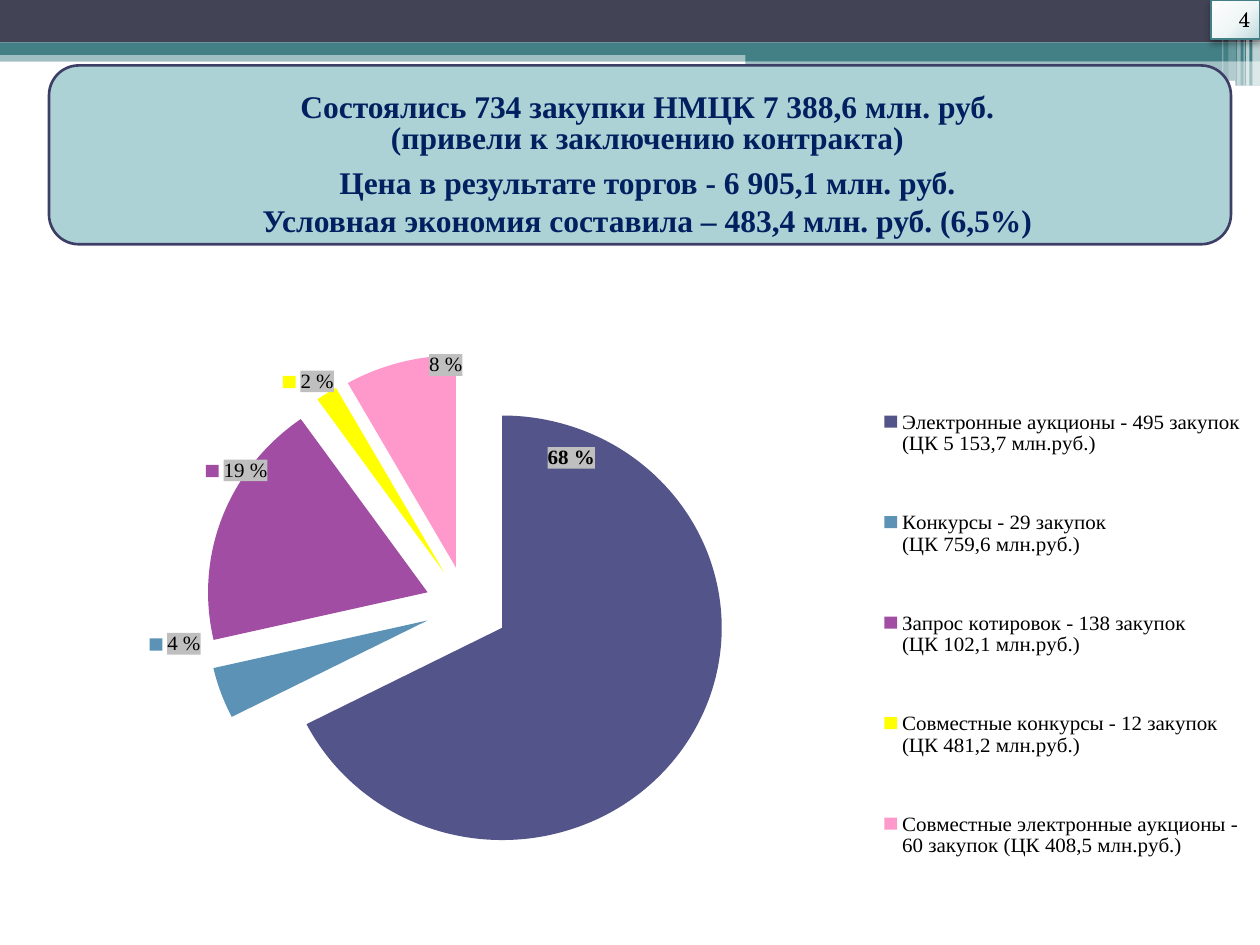
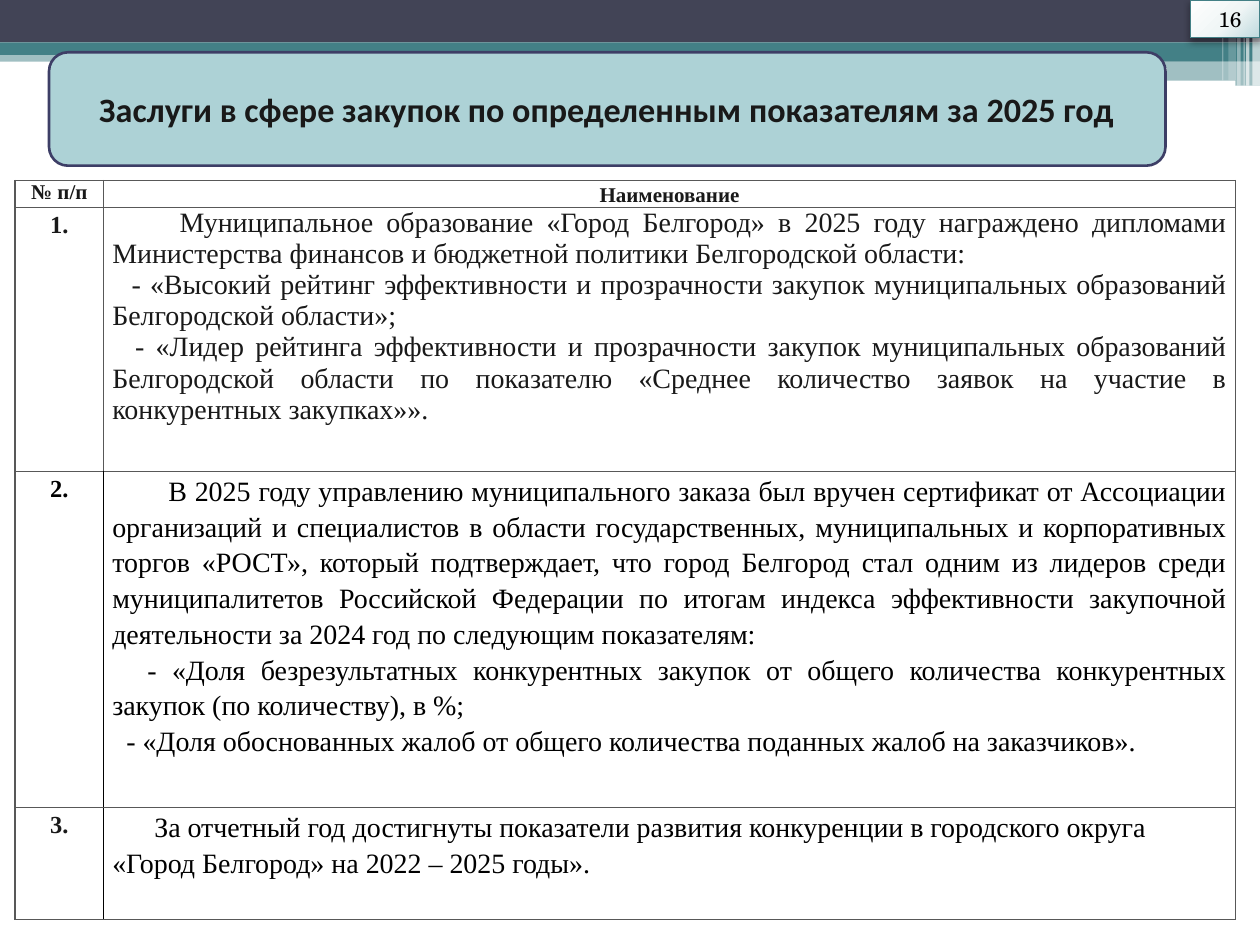
from lxml.etree import SubElement
from pptx import Presentation
from pptx.chart.data import CategoryChartData
from pptx.dml.color import RGBColor
from pptx.enum.chart import XL_CHART_TYPE, XL_LEGEND_POSITION
from pptx.enum.shapes import MSO_SHAPE
from pptx.enum.text import MSO_ANCHOR, MSO_AUTO_SIZE, PP_ALIGN
from pptx.oxml import parse_xml
from pptx.oxml.ns import nsdecls, qn
from pptx.util import Pt

TEAL, DARK, WHITE = "438086", "424456", "FFFFFF"
PANEL, EDGE, NAVY = "ADD2D6", "3D3E66", "002060"
INK, BLACK, GRID = "191919", "000000", "585858"
SERIF, SCHOOL, SANS = "Times New Roman", "TeX Gyre Schola", "Calibri"
BOX, ROUND = MSO_SHAPE.RECTANGLE, MSO_SHAPE.ROUNDED_RECTANGLE

# left, top, width, height, colour, opacity in percent, outline
BANDS = [
    (0, 28.8, 720, 6.5, TEAL, 50, BOX),
    (0, 0, 720, 24.2, DARK, 100, BOX),
    (0, 24.2, 720, 7.2, TEAL, 100, BOX),
    (426, 28, 294, 7, TEAL, 100, BOX),
    (426, 34.9, 294, 14.1, TEAL, 50, BOX),
    (580, 46, 126, 3.1, WHITE, 100, ROUND),
    (715.7, 0, 4.3, 49, WHITE, 65, BOX),
    (712, 0, 2, 49, WHITE, 65, BOX),
    (710.6, 0, 0.7, 49, WHITE, 60, BOX),
    (707, 0, 2, 49, WHITE, 40, BOX),
    (702, 0, 4.3, 46, WHITE, 20, BOX),
    (698.4, 0, 0.7, 46, WHITE, 30, BOX),
]
STRIP = (425.5, 38.9, 241.2, 2.2, WHITE, 100, ROUND)

# text, space before, line spacing
RESULTS = [
    ("Состоялись 734 закупки НМЦК 7 388,6 млн. руб.", 0, 0.8),
    ("(привели к заключению контракта)", 0.7, 0.8),
    ("Цена в результате торгов - 6 905,1 млн. руб.", 4, 1),
    ("Условная экономия составила – 483,4 млн. руб. (6,5%)", 0, 1),
]

# name, share, colour, label shift in x and y, key shown, bold
SHARES = [
    ("Электронные аукционы - 495 закупок\n(ЦК 5 153,7 млн.руб.)",
     0.675, "53548A", -0.12, -0.501, 0, 1),
    ("Конкурсы - 29 закупок\n(ЦК 759,6 млн.руб.)",
     0.039, "5C92B5", -0.011, -0.106, 1, 0),
    ("Запрос котировок - 138 закупок\n(ЦК 102,1 млн.руб.)",
     0.188, "A04DA3", 0.042, -0.056, 1, 0),
    ("Совместные конкурсы - 12 закупок\n(ЦК 481,2 млн.руб.)",
     0.016, "FFFF00", 0.009, 0.008, 1, 0),
    ("Совместные электронные аукционы -\n60 закупок (ЦК 408,5 млн.руб.)",
     0.082, "FF99CC", 0.052, 0.023, 0, 0),
]

# row height, line spacing, text colour, (first-line indent, text) pairs
AWARDS = [
    (150.9, 1, INK, [
        (38.5, "Муниципальное образование «Город Белгород» в 2025 году награждено "
               "дипломами Министерства финансов и бюджетной политики "
               "Белгородской области:"),
        (11, "- «Высокий рейтинг эффективности и прозрачности закупок "
             "муниципальных образований Белгородской области»;"),
        (13, "- «Лидер рейтинга эффективности и прозрачности закупок "
             "муниципальных образований Белгородской области по показателю "
             "«Среднее количество заявок на участие в конкурентных закупках»»."),
    ]),
    (192, 1.15, BLACK, [
        (32, "В 2025 году управлению муниципального заказа был вручен сертификат "
             "от Ассоциации организаций и специалистов в области "
             "государственных, муниципальных и корпоративных торгов «РОСТ», "
             "который подтверждает, что город Белгород стал одним из лидеров "
             "среди муниципалитетов Российской Федерации по итогам индекса "
             "эффективности закупочной деятельности за 2024 год по следующим "
             "показателям:"),
        (20, "- «Доля безрезультатных конкурентных закупок от общего количества "
             "конкурентных закупок (по количеству), в %;"),
        (8, "- «Доля обоснованных жалоб от общего количества поданных жалоб "
            "на заказчиков»."),
    ]),
    (64, 1.15, BLACK, [
        (24, "За отчетный год достигнуты показатели развития конкуренции "
             "в городского округа"),
        (0, "«Город Белгород» на 2022 – 2025 годы»."),
    ]),
]


def paint(fill, tone):
    fill.solid()
    fill.fore_color.rgb = RGBColor.from_string(tone)


def style(font, name, size, tone, bold=False):
    font.name, font.size, font.bold = name, Pt(size), bold
    paint(font.fill, tone)


def pad(frame, left, top, right, bottom):
    frame.margin_left, frame.margin_top = Pt(left), Pt(top)
    frame.margin_right, frame.margin_bottom = Pt(right), Pt(bottom)


def write(frame, lines, name, size, tone, bold=False, align=PP_ALIGN.CENTER):
    """Fill a frame with (text, space before, line spacing, indent) lines."""
    for i, (text, before, lead, dent) in enumerate(lines):
        para = frame.add_paragraph() if i else frame.paragraphs[0]
        para.text, para.alignment = text, align
        para.line_spacing, para.space_before = lead, Pt(before)
        if dent:
            para._p.get_or_add_pPr().set("indent", str(Pt(dent)))
        style(para.font, name, size, tone, bold)


def add_band(slide, left, top, wide, high, tone, part, form):
    band = slide.shapes.add_shape(
        form, Pt(left), Pt(top), Pt(wide), Pt(high))
    band.shadow.inherit = False
    paint(band.fill, tone)
    band.line.fill.background()
    if part < 100:
        hue = band.fill._xPr.find(".//" + qn("a:srgbClr"))
        SubElement(hue, qn("a:alpha")).set("val", str(part * 1000))


def add_panel(slide, top, wide, high):
    """Rounded panel with the title laid over it."""
    spot = [Pt(n) for n in (28, top, wide, high)]
    panel = slide.shapes.add_shape(ROUND, *spot)
    panel.shadow.inherit = False
    paint(panel.fill, PANEL)
    paint(panel.line.fill, EDGE)
    panel.line.width = Pt(1.5)
    title = slide.shapes.title
    slide.shapes._spTree.append(title._element)
    title.left, title.top, title.width, title.height = spot
    frame = title.text_frame
    frame.auto_size, frame.word_wrap = MSO_AUTO_SIZE.NONE, True
    frame.vertical_anchor = MSO_ANCHOR.MIDDLE
    return frame


def add_badge(slide, number, left, high):
    """Slide number in the top right corner."""
    badge = slide.shapes.add_shape(
        BOX, Pt(left), 0, Pt(720 - left), Pt(high))
    stops = "".join(
        f'<a:gs pos="{pos}000"><a:srgbClr val="{tone}"/></a:gs>'
        for pos, tone in ((0, "FEFEFE"), (55, "F0F6F6"), (100, "BFD9DD")))
    props = badge._element.spPr
    props.find(qn("a:prstGeom")).addnext(parse_xml(
        f'<a:gradFill {nsdecls("a")}><a:gsLst>{stops}</a:gsLst>'
        '<a:path path="circle"><a:fillToRect l="-40000" t="-90000" '
        'r="140000" b="190000"/></a:path></a:gradFill>'))
    paint(badge.line.fill, TEAL)
    badge.line.width = Pt(0.75)
    props.append(parse_xml(
        f'<a:effectLst {nsdecls("a")}><a:outerShdw blurRad="{Pt(4.1)}" '
        f'dist="{Pt(2)}" dir="5400000"><a:srgbClr val="{BLACK}">'
        '<a:alpha val="40000"/></a:srgbClr></a:outerShdw></a:effectLst>'))
    frame = badge.text_frame
    pad(frame, 15.8, 2, 0, 2)
    frame.vertical_anchor = MSO_ANCHOR.MIDDLE
    write(frame, [(number, 0, 1, 0)], SCHOOL, 12, BLACK, align=PP_ALIGN.LEFT)


def layout(**spots):
    """Manual chart layout from fractions of the chart area."""
    marks = "".join(f'<c:{k} val="{v}"/>' for k, v in spots.items())
    return parse_xml(f'<c:layout {nsdecls("c")}><c:manualLayout>{marks}'
                     '</c:manualLayout></c:layout>')


def make_label(index, left, top, key, bold):
    label = parse_xml(
        f'<c:dLbl {nsdecls("c", "a")}><c:idx val="{index}"/>'
        '<c:numFmt formatCode="0 %" sourceLinked="0"/>'
        '<c:spPr><a:solidFill><a:srgbClr val="BFBFBF"/></a:solidFill></c:spPr>'
        f'<c:txPr><a:bodyPr/><a:p><a:pPr><a:defRPr sz="1200" b="{bold}">'
        f'<a:latin typeface="{SERIF}"/></a:defRPr></a:pPr>'
        '<a:endParaRPr/></a:p></c:txPr><c:dLblPos val="outEnd"/>'
        f'<c:showLegendKey val="{key}"/><c:showVal val="1"/>'
        '<c:showCatName val="0"/><c:showSerName val="0"/>'
        '<c:showPercent val="0"/><c:showBubbleSize val="0"/></c:dLbl>')
    label.insert(1, layout(x=left, y=top))
    return label


def add_pie(slide):
    data = CategoryChartData(number_format="0.0%")
    data.categories = [share[0] for share in SHARES]
    data.add_series("Series 1", [share[1] for share in SHARES])
    chart = slide.shapes.add_chart(
        XL_CHART_TYPE.PIE, Pt(14.4), Pt(190.8), Pt(705.6), Pt(348.5), data).chart
    style(chart.font, SCHOOL, 10, BLACK)
    chart.has_title, chart.has_legend = False, True

    legend = chart.legend
    legend.position = XL_LEGEND_POSITION.RIGHT
    legend.include_in_layout = False
    style(legend.font, SERIF, 12, BLACK)
    for old in legend._element.findall(qn("c:layout")):
        legend._element.remove(old)
    legend._element.find(qn("c:legendPos")).addnext(layout(
        xMode="edge", yMode="edge", x=0.68, y=0, w=0.32, h=0.95))

    area = chart._chartSpace.chart.plotArea
    for old in area.findall(qn("c:layout")):
        area.remove(old)
    area.insert(0, layout(layoutTarget="inner", xMode="edge", yMode="edge",
                          x=0.011, y=0, w=0.693, h=0.857))

    plot = chart.plots[0]
    plot.vary_by_categories = True
    pie = plot.series[0]
    pie._element.get_or_add_spPr().addnext(
        parse_xml(f'<c:explosion {nsdecls("c")} val="19"/>'))
    labels = pie.data_labels
    labels.show_value = True
    group = labels._element
    for lead in group.findall(qn("c:showLeaderLines")):
        lead.set("val", "0")
    for i, (_, _, tone, left, top, key, bold) in enumerate(SHARES):
        paint(pie.points[i].format.fill, tone)
        group.insert(i, make_label(i, left, top, key, bold))


def set_cell(cell, row, col):
    pad(cell, 5, 0, 5, 0)
    cell.fill.background()
    props = cell._tc.get_or_add_tcPr()
    inner = "R" if col == 0 else "L"
    for i, side in enumerate("LRTB"):
        tone = BLACK if row > 1 and side == inner else GRID
        props.insert(i, parse_xml(
            f'<a:ln{side} {nsdecls("a")} w="{Pt(1)}"><a:solidFill>'
            f'<a:srgbClr val="{tone}"/></a:solidFill></a:ln{side}>'))


def add_awards(slide):
    table = slide.shapes.add_table(
        len(AWARDS) + 1, 2, Pt(8.6), Pt(103.2), Pt(697.5), Pt(422)).table
    table.first_row = table.horz_banding = False
    table.columns[0].width, table.columns[1].width = Pt(50.6), Pt(646.9)
    for r, row in enumerate(table.rows):
        row.height = Pt(AWARDS[r - 1][0] if r else 15.4)
        for c, cell in enumerate(row.cells):
            set_cell(cell, r, c)
    for c, (text, lead) in enumerate((("№ п/п", 1), ("Наименование", 1.15))):
        write(table.cell(0, c).text_frame, [(text, 0, lead, 0)],
              SERIF, 12, INK, True)
    for r, (_, lead, tone, items) in enumerate(AWARDS, 1):
        write(table.cell(r, 0).text_frame, [(f"{r}.", 0, 1.15, 0)],
              SERIF, 14, BLACK if r == 2 else INK, True)
        write(table.cell(r, 1).text_frame,
              [(text, 0, lead, dent) for dent, text in items],
              SERIF, 16, tone, align=PP_ALIGN.JUSTIFY)


def add_slide(deck, *extra):
    slide = deck.slides.add_slide(deck.slide_layouts[5])
    for band in (*BANDS[:5], *extra, *BANDS[5:]):
        add_band(slide, *band)
    return slide


def main():
    deck = Presentation()
    deck.slide_width, deck.slide_height = Pt(720), Pt(540)

    slide = add_slide(deck)
    frame = add_panel(slide, 37.4, 675.4, 102.2)
    frame.vertical_anchor = MSO_ANCHOR.TOP
    pad(frame, 15.8, 16.4, 7.2, 0)
    write(frame, [(*line, 0) for line in RESULTS], SERIF, 18, NAVY, True)
    add_pie(slide)
    add_badge(slide, "4", 692, 22.3)

    slide = add_slide(deck, STRIP)
    frame = add_panel(slide, 29.9, 638, 64.8)
    write(frame, [("Заслуги в сфере закупок по определенным показателям "
                   "за 2025 год", 0, 1, 0)], SANS, 19.5, INK, True)
    add_awards(slide)
    add_badge(slide, "16", 680.4, 21.6)
    deck.save("out.pptx")


if __name__ == "__main__":
    main()
